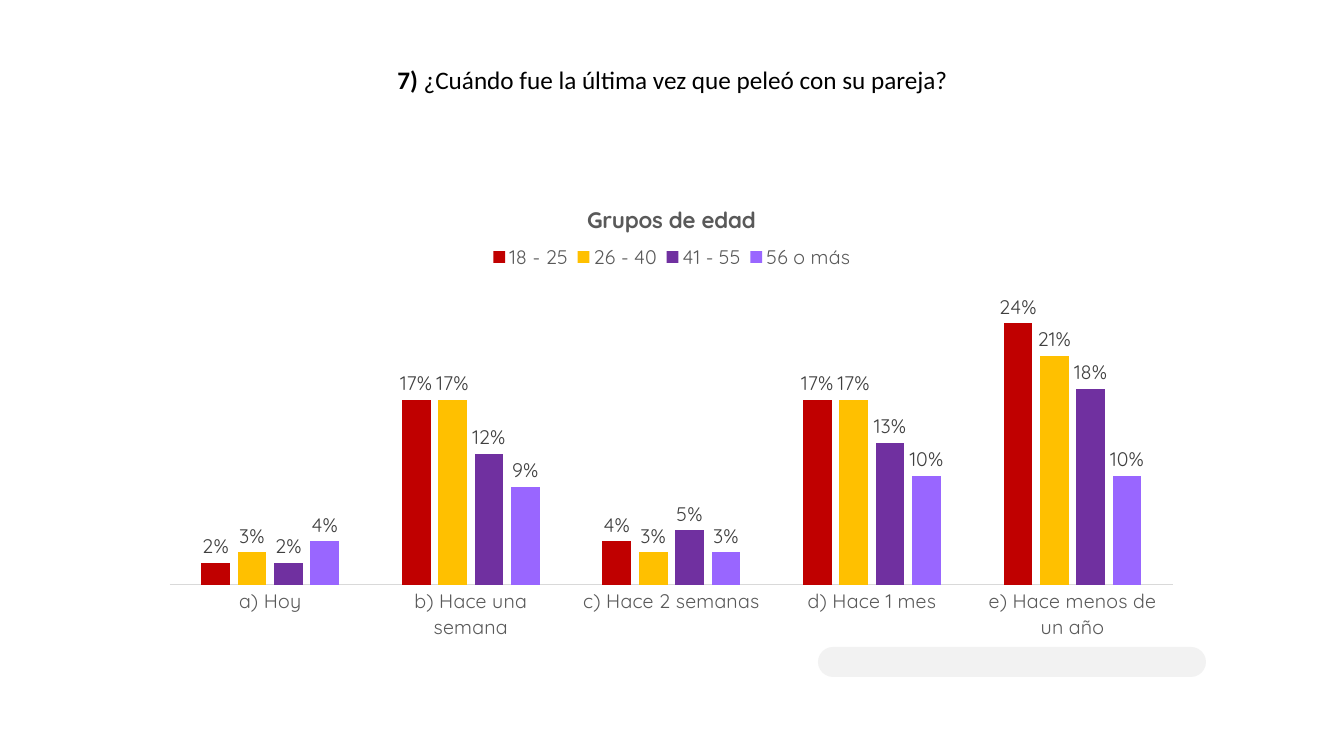
from lxml import etree
from pptx import Presentation
from pptx import util as u
from pptx.chart.data import CategoryChartData
from pptx.dml.color import RGBColor
from pptx.enum import chart as ch, shapes, text
from pptx.oxml import ns

HEAD = [("7) ", True), ("¿Cuándo fue la última vez que peleó con su pareja?", False)]
NAME = "Grupos de edad"
CATS = ["a) Hoy", "b) Hace una semana", "c) Hace 2 semanas", "d) Hace 1 mes", "e) Hace menos de un año"]
AGES = [
    ("18 - 25", "red", (0.02, 0.17, 0.04, 0.17, 0.24)),
    ("26 - 40", "gold", (0.03, 0.17, 0.03, 0.17, 0.21)),
    ("41 - 55", "plum", (0.02, 0.12, 0.05, 0.13, 0.18)),
    ("56 o más", "lilac", (0.04, 0.09, 0.03, 0.1, 0.1)),
]
HUES = {"red": "C00000", "gold": "FFC000", "plum": "7030A0", "lilac": "9966FF",
        "black": "000000", "text": "595959", "label": "404040", "rule": "D9D9D9", "pill": "F2F2F2"}
SIZE = (1344, 756)
TITLE = (333, 58, 679, 41)
PILL = (818, 647, 388, 30)
CHART = (145, 175, 1054, 472)
PLOT = (170, 258, 1003, 327)
KEY = (484, 243, 376, 28)
SCALE = 914400 / 100.8


def px(*nums):
    return [u.Emu(round(n * SCALE)) for n in nums]


def hue(key):
    return RGBColor.from_string(HUES[key])


def style(font, size, key, face="Quicksand", bold=False):
    font.size, font.name, font.bold = u.Pt(size), face, bold
    font.color.rgb = hue(key)


def place(node, index, spot, inner=False):
    for old in node.findall(ns.qn("c:layout")):
        node.remove(old)
    lay = etree.Element(ns.qn("c:layout"))
    man = etree.SubElement(lay, ns.qn("c:manualLayout"))
    left, top, wide, high = CHART
    rel = [(spot[0] - left) / wide, (spot[1] - top) / high]
    rel += [n / full for n, full in zip(spot[2:], (wide, high))]
    items = [("layoutTarget", "inner")] if inner else []
    items += [("xMode", "edge"), ("yMode", "edge")]
    items += [(tag, f"{n:.4f}") for tag, n in zip("xywh", rel)]
    for tag, val in items:
        etree.SubElement(man, ns.qn("c:" + tag)).set("val", val)
    node.insert(index, lay)


def add_head(slide):
    head = slide.shapes.title
    head.left, head.top, head.width, head.height = px(*TITLE)
    frame = head.text_frame
    frame.word_wrap = True
    frame.auto_size = text.MSO_AUTO_SIZE.NONE
    frame.vertical_anchor = text.MSO_ANCHOR.MIDDLE
    para = frame.paragraphs[0]
    para.alignment = text.PP_ALIGN.CENTER
    para.line_spacing = 1.07
    for words, bold in HEAD:
        run = para.add_run()
        run.text = words
        style(run.font, 18, "black", "Calibri", bold)


def add_pill(slide):
    pill = slide.shapes.add_shape(shapes.MSO_SHAPE.ROUNDED_RECTANGLE, *px(*PILL))
    pill.adjustments[0] = 0.5
    pill.shadow.inherit = False
    pill.fill.solid()
    pill.fill.fore_color.rgb = hue("pill")
    pill.line.fill.background()


def add_bars(slide):
    data = CategoryChartData(number_format="0%")
    data.categories = CATS
    for name, _, vals in AGES:
        data.add_series(name, vals)
    chart = slide.shapes.add_chart(ch.XL_CHART_TYPE.COLUMN_CLUSTERED, *px(*CHART), data).chart
    style(chart.font, 14, "text")

    chart.has_title = True
    run = chart.chart_title.text_frame.paragraphs[0].add_run()
    run.text = NAME
    style(run.font, 16, "text", bold=True)
    chart.chart_title.include_in_layout = False

    chart.has_legend = True
    key = chart.legend
    key.position = ch.XL_LEGEND_POSITION.TOP
    key.include_in_layout = False
    style(key.font, 14, "text")

    axis = chart.category_axis
    axis.major_tick_mark = ch.XL_TICK_MARK.NONE
    axis.format.line.color.rgb = hue("rule")
    axis.format.line.width = u.Pt(0.75)
    style(axis.tick_labels.font, 14, "text")
    axis = chart.value_axis
    axis.visible = False
    axis.has_major_gridlines = False
    axis.minimum_scale, axis.maximum_scale = 0, 0.3

    plot = chart.plots[0]
    plot.gap_width, plot.overlap = 219, -27
    plot.vary_by_categories = False
    for bars, (_, color, _) in zip(plot.series, AGES):
        bars.format.fill.solid()
        bars.format.fill.fore_color.rgb = hue(color)
        bars.invert_if_negative = False
        tags = bars.data_labels
        tags.show_value = True
        tags.position = ch.XL_LABEL_POSITION.OUTSIDE_END
        tags.number_format, tags.number_format_is_linked = "0%", False
        style(tags.font, 14, "label")

    root = chart.element.find(ns.qn("c:chart"))
    place(root.find(ns.qn("c:title")), 1, (583, 200))
    place(root.find(ns.qn("c:plotArea")), 0, PLOT, True)
    place(root.find(ns.qn("c:legend")), 1, KEY)


def main():
    deck = Presentation()
    deck.slide_width, deck.slide_height = px(*SIZE)
    slide = deck.slides.add_slide(deck.slide_layouts[5])
    add_pill(slide)
    add_head(slide)
    add_bars(slide)
    deck.save("out.pptx")


if __name__ == "__main__":
    main()
